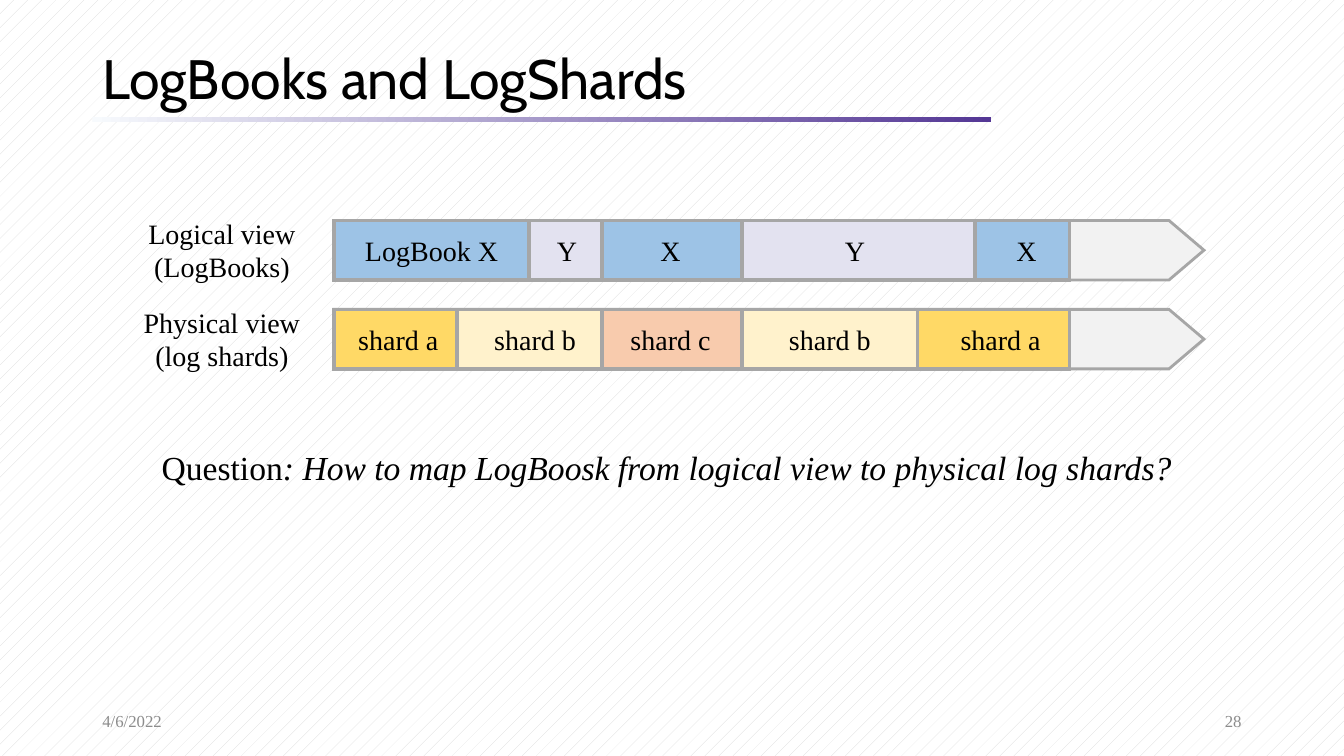
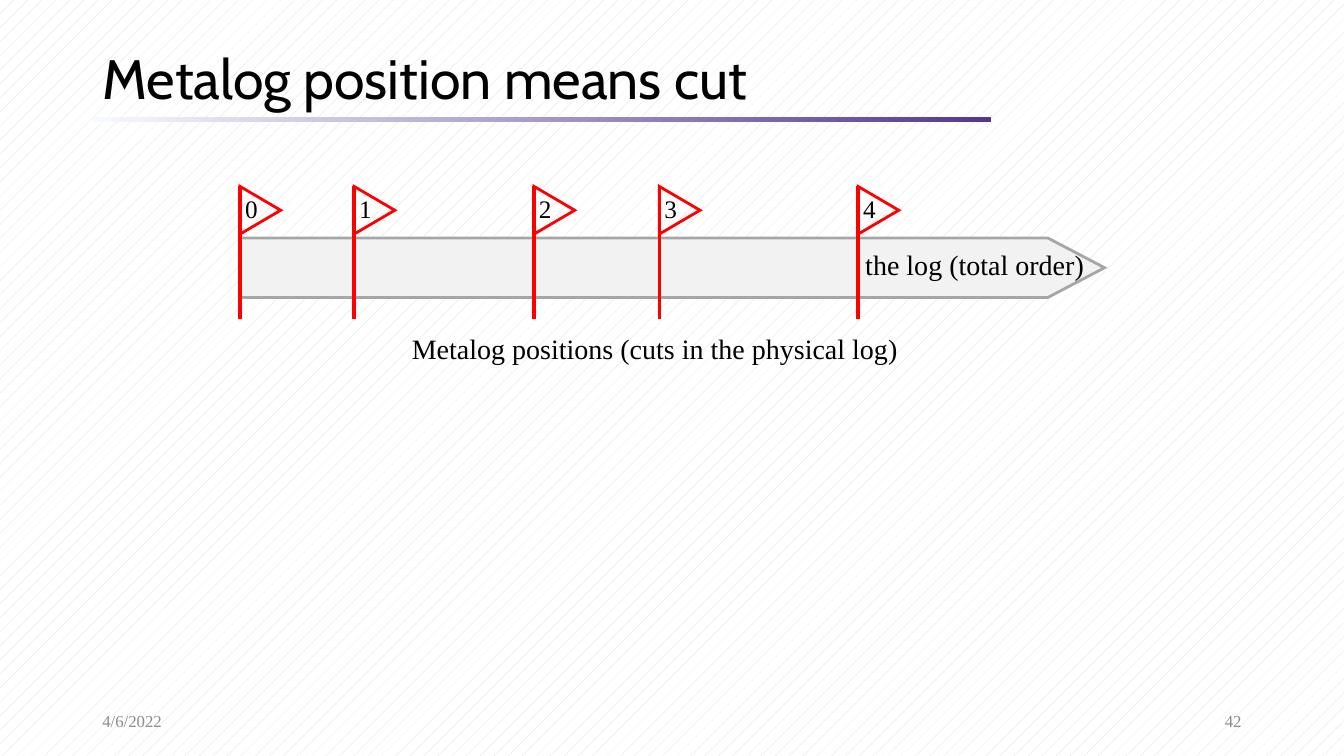
from lxml import etree
from pptx import Presentation
from pptx import util as u
from pptx.dml.color import RGBColor
from pptx.enum import dml, shapes, text
from pptx.oxml.ns import qn

BODY_FONT = "Times New Roman"
TITLE_FONT = "Cabin"
BLACK, MUTED, WHITE = "000000", "8C8C8C", "FFFFFF"
PATTERN, BAND_START, BAND_END = "D9D9D9", "F7FAFD", "543795"
OUTLINE, LOG_FILL, FLAG = "A6A6A6", "F2F2F2", "FF0000"
BOOK_X, BOOK_Y = "9DC3E6", "E3E2F0"
SHARD_A, SHARD_B, SHARD_C = "FFD966", "FFF2CC", "F8CBAD"
LEFT, CENTER, RIGHT = text.PP_ALIGN.LEFT, text.PP_ALIGN.CENTER, text.PP_ALIGN.RIGHT
MARGIN = 66
FOOTER_WIDTH = 216
ROW_HEIGHT = 42.5


def rgb(value):
    return RGBColor.from_string(value)


def points(*lengths):
    return [u.Pt(length) for length in lengths]


def add_span(para, words, size=20, font=BODY_FONT, color=BLACK, italic=None):
    span = para.add_run()
    span.text = words
    span.font.size = u.Pt(size)
    span.font.name = font
    span.font.color.rgb = rgb(color)
    span.font.italic = italic


def add_text(host, box, lines, align=CENTER, middle=False, **style):
    frame = host.add_textbox(*points(*box)).text_frame
    frame.word_wrap = True
    if middle:
        frame.vertical_anchor = text.MSO_ANCHOR.MIDDLE
    for index, words in enumerate(lines):
        para = frame.add_paragraph() if index else frame.paragraphs[0]
        para.alignment = align
        add_span(para, words, **style)
    return frame


def add_outlined(host, kind, box, line, weight, fill=None):
    shape = host.add_shape(kind, *points(*box))
    shape.shadow.inherit = False
    if fill:
        shape.fill.solid()
        shape.fill.fore_color.rgb = rgb(fill)
    else:
        shape.fill.background()
    shape.line.color.rgb = rgb(line)
    shape.line.width = u.Pt(weight)
    outline = shape.element.spPr.find(qn("a:ln"))
    etree.SubElement(outline, qn("a:miter"), lim="800000")
    return shape


def add_log_arrow(host, box, tip):
    arrow = add_outlined(host, shapes.MSO_SHAPE.PENTAGON, box, OUTLINE, 2, LOG_FILL)
    arrow.adjustments[0] = tip / box[3]


def add_cell(host, box, label, fill, shift):
    cell = add_outlined(host, shapes.MSO_SHAPE.RECTANGLE, box, OUTLINE, 2.5, fill)
    frame = cell.text_frame
    frame.margin_left = u.Pt(max(0, 2 * shift))
    frame.margin_right = u.Pt(max(0, -2 * shift))
    frame.vertical_anchor = text.MSO_ANCHOR.MIDDLE
    frame.paragraphs[0].alignment = CENTER
    add_span(frame.paragraphs[0], label)


def add_log_row(page, box, captions, cells):
    left, top, width, height = box
    add_text(page.shapes, (left - 152, top - 6.5, 144, 55.5), captions)
    row = page.shapes.add_group_shape().shapes
    add_log_arrow(row, box, 25)
    start = 0
    for label, fill, end, shift in cells:
        add_cell(row, (left + start, top, end - start, height), label, fill, shift)
        start = end


def add_flag(page, box, label):
    left, top, width, height = box
    flag = page.shapes.add_group_shape().shapes
    pole = flag.add_connector(
        shapes.MSO_CONNECTOR.STRAIGHT, *points(left, top, left, top + height))
    pole.line.color.rgb = rgb(FLAG)
    pole.line.width = u.Pt(2.5)
    etree.SubElement(pole.element.spPr, qn("a:effectLst"))
    base = 34
    pennant = add_outlined(
        flag, shapes.MSO_SHAPE.ISOSCELES_TRIANGLE,
        (left + (width - base) / 2, top + (base - width) / 2, base, width), FLAG, 2)
    pennant.rotation = 90
    add_text(page.shapes, (left - 4, top + 1.4, 24, 29), [label], size=18)


def add_page(deck, title, number):
    page = deck.slides.add_slide(deck.slide_layouts[6])
    ground = page.background.fill
    ground.patterned()
    ground.pattern = dml.MSO_PATTERN.PERCENT_5
    ground.fore_color.rgb = rgb(PATTERN)
    ground.back_color.rgb = rgb(WHITE)

    band = page.shapes.add_shape(
        shapes.MSO_SHAPE.RECTANGLE, *points(MARGIN, 83.5, 642, 4))
    band.shadow.inherit = False
    band.line.fill.background()
    band.fill.gradient()
    band.fill.gradient_angle = 0
    for stop, color in zip(band.fill.gradient_stops, (BAND_START, BAND_END)):
        stop.color.rgb = rgb(color)

    heading = add_text(page.shapes, (MARGIN, 31, 828, 54), [title], LEFT, True,
                       size=39.6, font=TITLE_FONT)
    heading.paragraphs[0].line_spacing = 0.9
    footers = (
        (MARGIN, "4/6/2022", LEFT),
        (960 - MARGIN - FOOTER_WIDTH, number, RIGHT),
    )
    for left, words, align in footers:
        add_text(page.shapes, (left, 500.5, FOOTER_WIDTH, 28.8), [words], align, True,
                 size=12, color=MUTED)
    return page


def build_shards(deck):
    page = add_page(deck, "LogBooks and LogShards", "28")
    rows = (
        (157.5, ("Logical view", "(LogBooks)"), (
            ("LogBook X", BOOK_X, 139.5, 0),
            ("Y", BOOK_Y, 191.5, 1),
            ("X", BOOK_X, 291.5, -1),
            ("Y", BOOK_Y, 458, -2.5),
            ("X", BOOK_X, 525.5, 3),
        )),
        (221, ("Physical view", "(log shards)"), (
            ("shard a", SHARD_A, 88, 2),
            ("shard b", SHARD_B, 191.5, 4),
            ("shard c", SHARD_C, 291.5, -1),
            ("shard b", SHARD_B, 417, 0),
            ("shard a", SHARD_A, 525.5, 5),
        )),
    )
    for top, captions, cells in rows:
        add_log_row(page, (238.5, top, 621.5, ROW_HEIGHT), captions, cells)
    question = add_text(page.shapes, (104, 315.5, 744.5, 36), ["Question"], size=24)
    add_span(question.paragraphs[0],
             ": How to map LogBoosk from logical view to physical log shards?",
             size=24, italic=True)


def build_cuts(deck):
    page = add_page(deck, "Metalog position means cut", "42")
    add_log_arrow(page.shapes, (171.5, 170, 617.5, ROW_HEIGHT), 40.5)
    add_text(page.shapes, (274.5, 233.5, 386.5, 31.5),
             ["Metalog positions (cuts in the physical log)"])
    for position, left in enumerate((171.5, 253, 381.5, 471, 613)):
        add_flag(page, (left, 133.2, 29, 95), str(position))
    add_text(page.shapes, (609, 173, 174.5, 31.5), ["the log (total order)"])


def main():
    deck = Presentation()
    deck.slide_width, deck.slide_height = points(960, 540)
    build_shards(deck)
    build_cuts(deck)
    deck.save("out.pptx")


if __name__ == "__main__":
    main()
